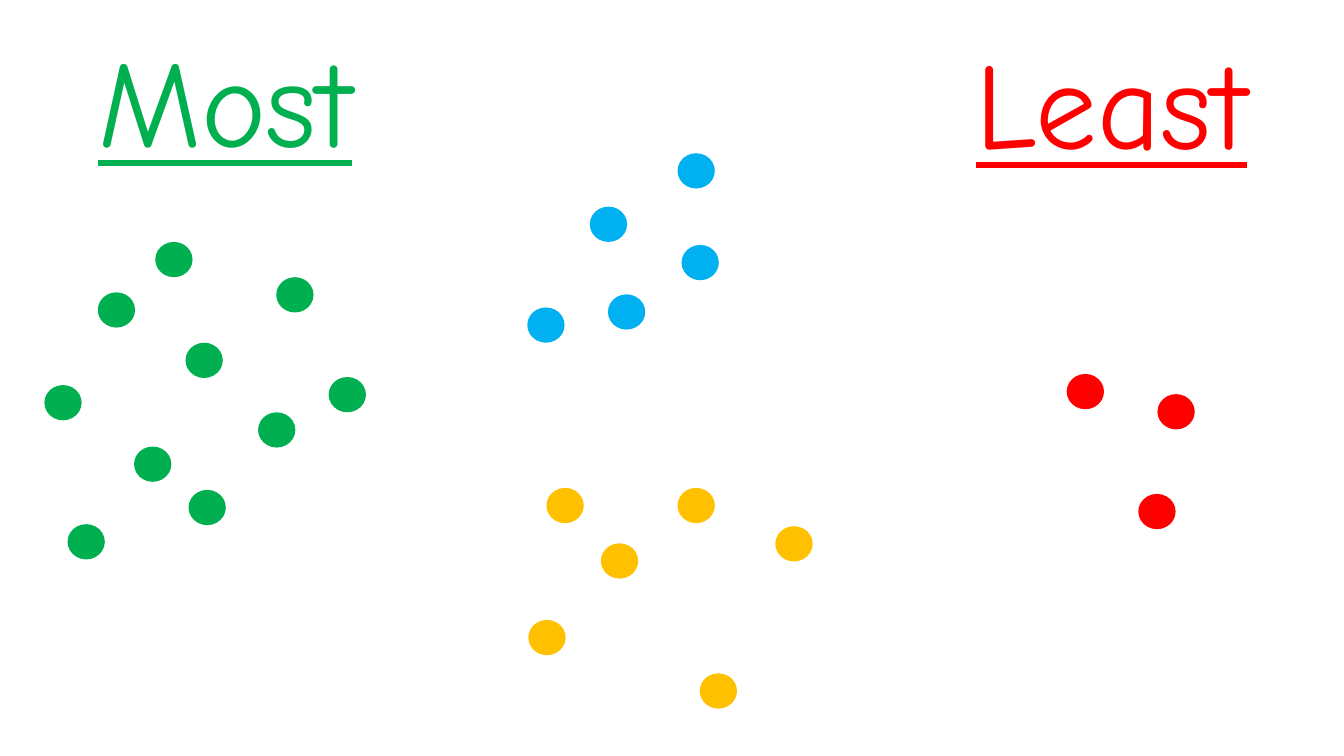
"""Build a slide that sorts groups of dots from most to least."""
from pptx import Presentation
from pptx.dml.color import RGBColor
from pptx.enum.shapes import MSO_SHAPE
from pptx.enum.text import MSO_ANCHOR, PP_ALIGN
from pptx.util import Inches, Pt

OVAL = MSO_SHAPE.OVAL
BOTTOM = MSO_ANCHOR.BOTTOM
CENTER = PP_ALIGN.CENTER

GREEN, RED, BLUE, AMBER = "00B050", "FF0000", "00B0F0", "FFC000"

HEADINGS = [("Most", -0.07, 0.24, GREEN), ("Least", 8.72, 0.26, RED)]

DOTS = {
    GREEN: [(1.84, 3.4), (0.44, 3.82), (0.97, 2.9), (1.87, 4.86), (1.33, 4.43),
            (3.26, 3.74), (0.67, 5.2), (2.74, 2.75), (2.56, 4.09), (1.54, 2.4)],
    RED: [(10.58, 3.71), (11.48, 3.91), (11.29, 4.9)],
    BLUE: [(6.03, 2.92), (5.23, 3.05), (6.76, 2.43), (6.72, 1.52), (5.85, 2.05)],
    AMBER: [(5.96, 5.39), (7.69, 5.22), (5.42, 4.84), (5.24, 6.15), (6.72, 4.84),
            (6.94, 6.68)],
}


def rgb(value):
    """Turn a hex string into a colour."""
    return RGBColor.from_string(value)


def write(tf, text, font, size, color, underline=False, align=CENTER, spacing=0.9):
    """Write one formatted paragraph into a text frame."""
    p = tf.paragraphs[0]
    p.alignment = align
    p.line_spacing = spacing
    r = p.add_run()
    r.text = text
    r.font.name = font
    r.font.size = Pt(size)
    r.font.underline = underline
    r.font.color.rgb = rgb(color)


class Board:
    """Hold the style and the current slide."""

    font = "Comic Neue"
    heading_size = 88
    heading_box = (4.61, 1.54)
    dot_box = (0.37, 0.35)

    def __init__(self, slide):
        """Keep the slide to draw on."""
        self.s = slide

    def heading(self, text, left, top, color):
        """Add a large underlined heading."""
        width, height = self.heading_box
        sp = self.s.shapes.add_textbox(Inches(left), Inches(top), Inches(width), Inches(height))
        tf = sp.text_frame
        tf.word_wrap = True
        tf.vertical_anchor = BOTTOM
        write(tf, text, self.font, self.heading_size, color, underline=True)

    def dot(self, left, top, color):
        """Add a filled dot."""
        width, height = self.dot_box
        sp = self.s.shapes.add_shape(OVAL, Inches(left), Inches(top), Inches(width), Inches(height))
        sp.shadow.inherit = False
        sp.fill.solid()
        sp.fill.fore_color.rgb = rgb(color)
        sp.line.fill.background()


def main():
    """Build and save the presentation."""
    prs = Presentation()
    prs.slide_width, prs.slide_height = Inches(13.33), Inches(7.5)
    board = Board(prs.slides.add_slide(prs.slide_layouts[6]))
    for text, left, top, color in HEADINGS:
        board.heading(text, left, top, color)
    for color, spots in DOTS.items():
        for left, top in spots:
            board.dot(left, top, color)
    prs.save("out.pptx")


if __name__ == "__main__":
    main()
